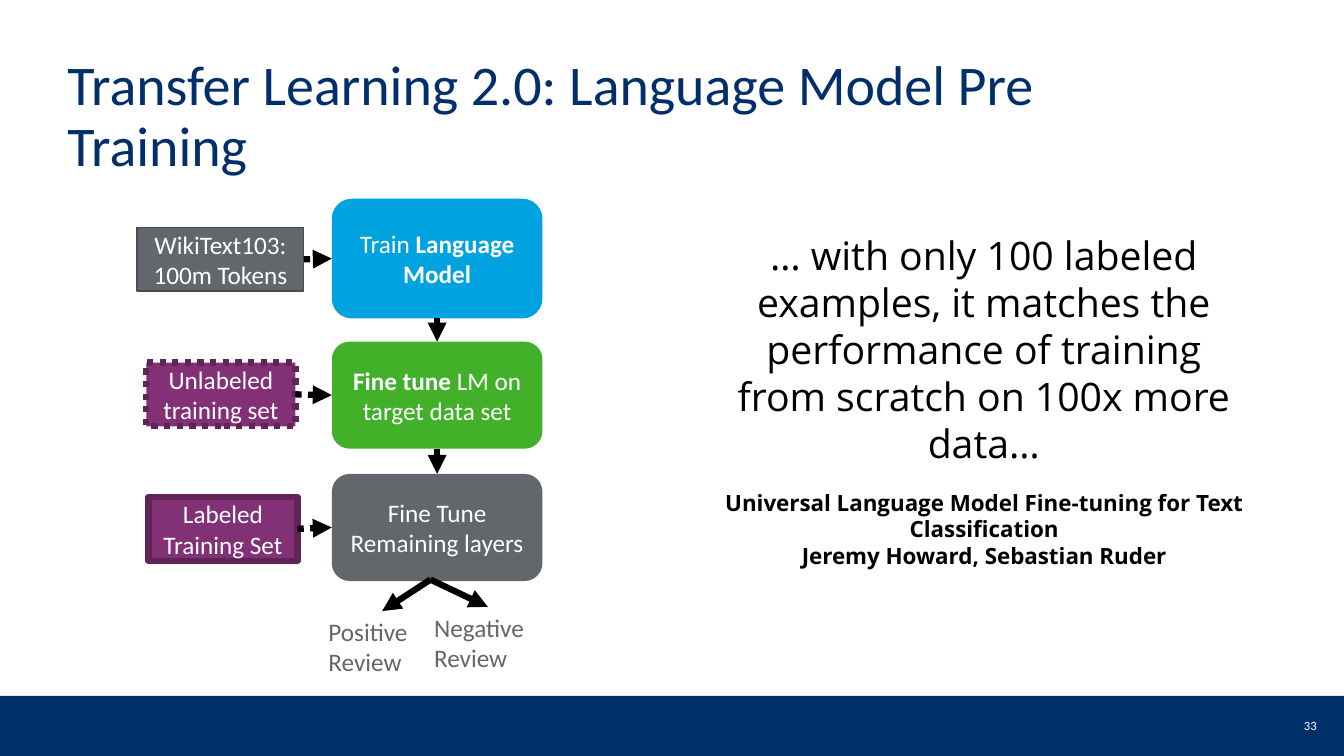
from dataclasses import dataclass

from lxml.etree import SubElement
from pptx import Presentation
from pptx.dml.color import RGBColor
from pptx.enum.dml import MSO_LINE
from pptx.enum.shapes import MSO_CONNECTOR, MSO_SHAPE
from pptx.enum.text import MSO_ANCHOR, MSO_AUTO_SIZE, PP_ALIGN
from pptx.oxml.ns import qn
from pptx.util import Pt


@dataclass(frozen=True)
class Theme:
    navy: str = "002F6C"
    blue: str = "00A3E0"
    green: str = "43B02A"
    gray: str = "63666A"
    dark_gray: str = "494B4E"
    purple: str = "833177"
    dark_purple: str = "612458"
    white: str = "FFFFFF"
    black: str = "000000"
    font: str = "Calibri"
    quote_font: str = "Open Sans"
    title_size: float = 40
    quote_size: float = 28
    body_size: float = 18
    credit_size: float = 16
    number_size: float = 9
    heavy_line: float = 4.5


class SlideBuilder:
    def __init__(self, prs, theme):
        self.theme = theme
        self.slide = prs.slides.add_slide(prs.slide_layouts[5])

    def add_runs(self, tf, paragraphs, size, color, font=None, align=PP_ALIGN.CENTER):
        tf.word_wrap = True
        for i, runs in enumerate(paragraphs):
            p = tf.paragraphs[0] if i == 0 else tf.add_paragraph()
            p.alignment = align
            for text, bold in runs:
                r = p.add_run()
                r.text = text
                r.font.name = font or self.theme.font
                r.font.size = Pt(size)
                r.font.bold = bold
                r.font.color.rgb = RGBColor.from_string(color)

    def title(self, text, x, y, w, h):
        sp = self.slide.shapes.title
        sp.left, sp.top, sp.width, sp.height = Pt(x), Pt(y), Pt(w), Pt(h)
        tf = sp.text_frame
        tf.auto_size = MSO_AUTO_SIZE.NONE
        tf.vertical_anchor = MSO_ANCHOR.TOP
        self.add_runs(tf, [[(text, False)]], self.theme.title_size, self.theme.navy,
                      align=PP_ALIGN.LEFT)
        tf.paragraphs[0].line_spacing = 0.9

    def box(self, x, y, w, h, fill, paragraphs=(), preset=MSO_SHAPE.RECTANGLE,
            line=None, line_width=1, dash=None):
        sp = self.slide.shapes.add_shape(preset, Pt(x), Pt(y), Pt(w), Pt(h))
        sp.shadow.inherit = False
        sp.fill.solid()
        sp.fill.fore_color.rgb = RGBColor.from_string(fill)
        if line:
            sp.line.color.rgb = RGBColor.from_string(line)
            sp.line.width = Pt(line_width)
            if dash:
                sp.line.dash_style = dash
        else:
            sp.line.fill.background()
        sp.text_frame.vertical_anchor = MSO_ANCHOR.MIDDLE
        self.add_runs(sp.text_frame, paragraphs, self.theme.body_size, self.theme.white)

    def text(self, x, y, w, h, paragraphs, size, color, font=None, align=PP_ALIGN.CENTER):
        sp = self.slide.shapes.add_textbox(Pt(x), Pt(y), Pt(w), Pt(h))
        self.add_runs(sp.text_frame, paragraphs, size, color, font, align)

    def arrow(self, x1, y1, x2, y2, dash=None):
        sp = self.slide.shapes.add_connector(
            MSO_CONNECTOR.STRAIGHT, Pt(x1), Pt(y1), Pt(x2), Pt(y2))
        sp.line.color.rgb = RGBColor.from_string(self.theme.black)
        sp.line.width = Pt(self.theme.heavy_line)
        if dash:
            sp.line.dash_style = dash
        props = sp._element.spPr
        SubElement(props.find(qn("a:ln")), qn("a:tailEnd"), type="triangle")
        SubElement(props, qn("a:effectLst"))


def main():
    prs = Presentation()
    prs.slide_width, prs.slide_height = Pt(960), Pt(540)
    t = Theme()
    s = SlideBuilder(prs, t)
    dots = MSO_LINE.ROUND_DOT

    s.box(0, 497, 960, 43, t.navy)
    s.text(912, 509, 48, 18, [[("33", False)]], t.number_size, t.white)
    s.title("Transfer Learning 2.0: Language Model Pre Training", 41, 37.5, 828, 104.5)

    stage_x, stage_w = 237, 150.5
    stage_mid = stage_x + stage_w / 2
    stages = [
        (142, 85.5, t.blue, [("Train ", False), ("Language Model", True)]),
        (244, 76.5, t.green, [("Fine tune ", True), ("LM on target data set", False)]),
        (338.5, 76.5, t.gray, [("Fine Tune Remaining layers", False)]),
    ]
    inputs = [
        (98, 119, 162.5, ["WikiText103:", "100m Tokens"], t.gray, t.dark_gray, 1, None),
        (104.5, 106.5, 259, ["Unlabeled training set"], t.purple, t.dark_purple,
         t.heavy_line, dots),
        (106, 106.5, 355, ["Labeled Training Set"], t.purple, t.dark_purple,
         t.heavy_line, None),
    ]
    for y, h, fill, runs in stages:
        s.box(stage_x, y, stage_w, h, fill, [runs], MSO_SHAPE.ROUNDED_RECTANGLE)
    for (x, w, y, lines, fill, line, width, dash), (top, h, *_) in zip(inputs, stages):
        s.box(x, y, w, 45.5, fill, [[(text, False)] for text in lines],
              line=line, line_width=width, dash=dash)
        s.arrow(x + w, y + 22.75, stage_x, top + h / 2, dots)
    for (top, h, *_), (next_top, *_) in zip(stages, stages[1:]):
        s.arrow(stage_mid, top + h, stage_mid, next_top)

    s.text(509, 161.5, 387.5, 143,
           [[("… with only 100 labeled examples, it matches the performance of "
              "training from scratch on 100x more data…", False)]],
           t.quote_size, t.black, t.quote_font)
    s.text(463, 345.5, 480, 46,
           [[("Universal Language Model Fine-tuning for Text Classification", True)],
            [("Jeremy Howard, Sebastian Ruder", True)]],
           t.credit_size, t.black, t.quote_font)

    outcomes = [("Positive Review", 227.5, 436.5, 273), ("Negative Review", 303, 433.5, 348.5)]
    for label, x, y, tip_x in outcomes:
        s.text(x, y, 90, 51, [[(label, False)]], t.body_size, t.gray, align=PP_ALIGN.LEFT)
        s.arrow(307.5, 414, tip_x, y)

    prs.save("out.pptx")


if __name__ == "__main__":
    main()
